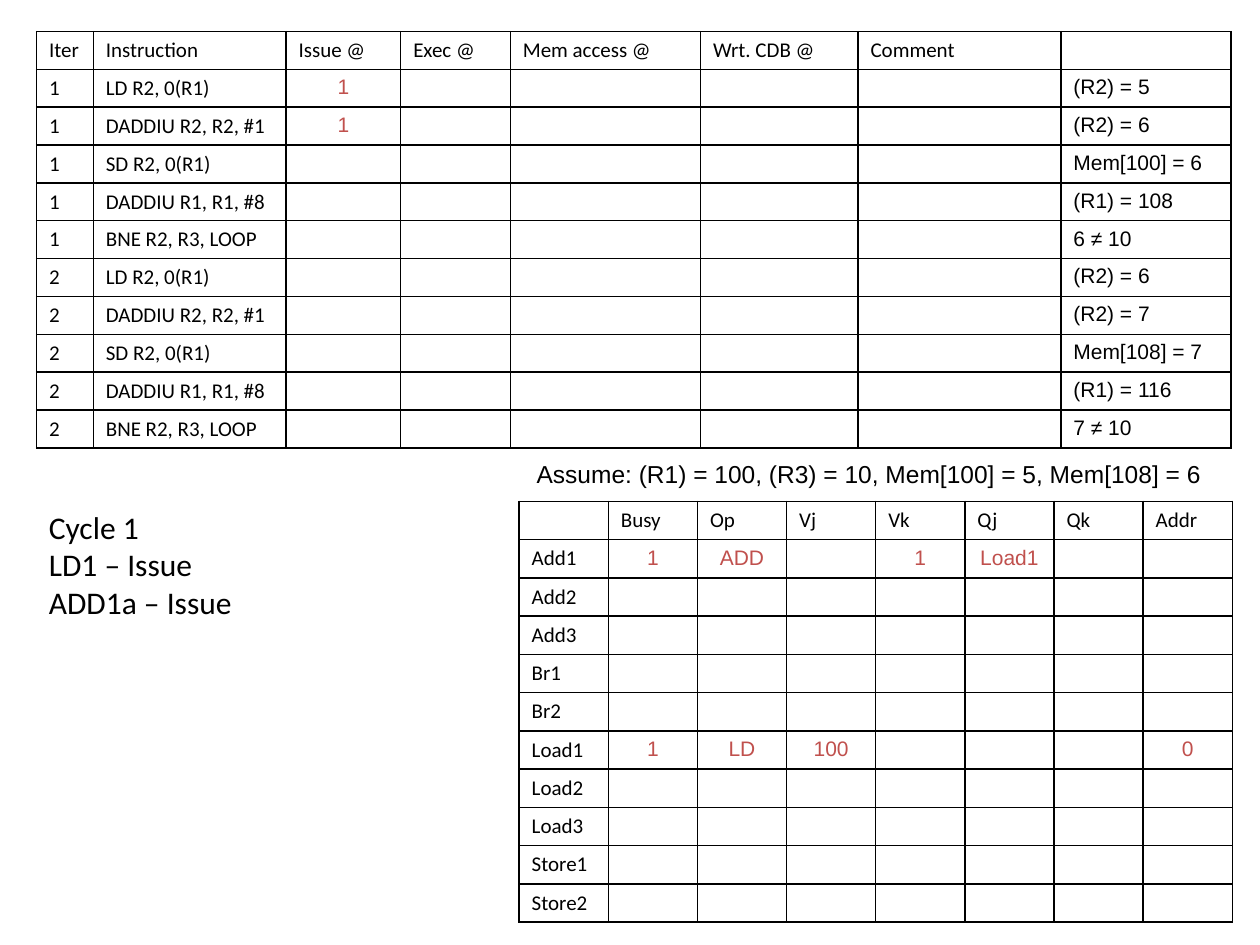
from dataclasses import dataclass

from lxml.etree import SubElement
from pptx import Presentation
from pptx.dml.color import RGBColor as RGB
from pptx.enum.text import MSO_AUTO_SIZE as AutoSize, PP_ALIGN as Align
from pptx.oxml import parse_xml
from pptx.oxml.ns import nsdecls, qn
from pptx.util import Inches, Pt

# Content
ITERATIONS = (1, 2)
LOOP_BODY = ["LD R2, 0(R1)", "DADDIU R2, R2, #1", "SD R2, 0(R1)",
             "DADDIU R1, R1, #8", "BNE R2, R3, LOOP"]
TIMING_HEADER = ["Iter", "Instruction", "Issue @", "Exec @", "Mem access @",
                 "Wrt. CDB @", "Comment", ""]
RESULTS = ["(R2) = 5", "(R2) = 6", "Mem[100] = 6", "(R1) = 108", "6 ≠ 10",
           "(R2) = 6", "(R2) = 7", "Mem[108] = 7", "(R1) = 116", "7 ≠ 10"]
ISSUED = {1: "1", 2: "1"}  # table row: issue cycle

STATION_HEADER = ["", "Busy", "Op", "Vj", "Vk", "Qj", "Qk", "Addr"]
STATIONS = ["Add1", "Add2", "Add3", "Br1", "Br2", "Load1", "Load2", "Load3",
            "Store1", "Store2"]
STATION_STATE = {
    "Add1": ["1", "ADD", "", "1", "Load1", "", ""],
    "Load1": ["1", "LD", "100", "", "", "", "0"],
}

CYCLE_NOTES = ["Cycle 1", "LD1 – Issue", "ADD1a – Issue"]
ASSUMPTION = ["Assume: (R1) = 100, (R3) = 10, Mem[100] = 5, Mem[108] = 6"]

# Layout in inches
TIMING_WIDTHS = [0.45, 1.53, 0.91, 0.87, 1.51, 1.25, 1.61, 1.35]
STATION_WIDTHS = [5.66 / len(STATION_HEADER)] * len(STATION_HEADER)
ROW_HEIGHT = 0.3


@dataclass(frozen=True)
class Theme:
    ink: RGB = RGB(0x00, 0x00, 0x00)
    accent: RGB = RGB(0xC0, 0x50, 0x4D)
    label_font: str = "Calibri"
    value_font: str = "Arial"
    table_size: int = 12
    assumption_size: int = 14
    cycle_size: int = 18
    border: int = 1


THEME = Theme()
LABEL = (THEME.label_font, THEME.ink, Align.LEFT)
RESULT = (THEME.value_font, THEME.ink, Align.LEFT)
ACTIVE = (THEME.value_font, THEME.accent, Align.CENTER)


def format_runs(para, font, size, color):
    for span in para.runs:
        span.font.name = font
        span.font.size = Pt(size)
        span.font.color.rgb = color


def add_borders(cell):
    properties = cell._tc.get_or_add_tcPr()
    for side in ("lnL", "lnR", "lnT", "lnB"):
        properties.append(parse_xml(
            f'<a:{side} {nsdecls("a")} w="{Pt(THEME.border)}"><a:solidFill>'
            f'<a:srgbClr val="{THEME.ink}"/></a:solidFill></a:{side}>'))


def add_grid(page, left, top, widths, rows, style_of):
    """Add a ruled table; style_of(row, column) gives font, color, alignment."""
    frame = page.shapes.add_table(
        len(rows), len(widths), Inches(left), Inches(top),
        Inches(sum(widths)), Inches(ROW_HEIGHT * len(rows)))
    table = frame.table
    table.first_row = table.horz_banding = False
    for column, width in zip(table.columns, widths):
        column.width = Inches(width)
    for r, values in enumerate(rows):
        table.rows[r].height = Inches(ROW_HEIGHT)
        for c, value in enumerate(values):
            cell = table.cell(r, c)
            add_borders(cell)
            cell.fill.background()
            para = cell.text_frame.paragraphs[0]
            if value:
                font, color, alignment = style_of(r, c)
                para.text = value
                para.alignment = alignment
                format_runs(para, font, THEME.table_size, color)
            else:  # keeps an empty cell from stretching its row
                SubElement(para._p, qn("a:endParaRPr"),
                           sz=str(THEME.table_size * 100))


def add_text(page, left, top, width, height, lines, font, size):
    box = page.shapes.add_textbox(
        Inches(left), Inches(top), Inches(width), Inches(height))
    box.text_frame.text = "\n".join(lines)
    box.text_frame.word_wrap = False
    box.text_frame.auto_size = AutoSize.SHAPE_TO_FIT_TEXT
    for para in box.text_frame.paragraphs:
        format_runs(para, font, size, THEME.ink)


def timing_style(row, column):
    if row and column == len(TIMING_HEADER) - 1:
        return RESULT
    return ACTIVE if row and column == 2 else LABEL


def station_style(row, column):
    return ACTIVE if row and column else LABEL


def main():
    deck = Presentation()
    deck.slide_width, deck.slide_height = Inches(10), Inches(7.5)
    page = deck.slides.add_slide(deck.slide_layouts[6])

    # Reservation stations
    idle = [""] * (len(STATION_HEADER) - 1)
    station_rows = [STATION_HEADER] + [
        [name] + STATION_STATE.get(name, idle) for name in STATIONS]
    add_grid(page, 4.12, 3.98, STATION_WIDTHS, station_rows, station_style)

    # Events of this cycle
    add_text(page, 0.29, 3.98, 1.67, 1.31, CYCLE_NOTES,
             THEME.label_font, THEME.cycle_size)

    # Instruction timing
    steps = [(str(i), code) for i in ITERATIONS for code in LOOP_BODY]
    timing_rows = [TIMING_HEADER] + [
        [iteration, code, ISSUED.get(row, ""), "", "", "", "", result]
        for row, ((iteration, code), result)
        in enumerate(zip(steps, RESULTS), start=1)]
    add_grid(page, 0.29, 0.25, TIMING_WIDTHS, timing_rows, timing_style)

    # Starting values
    add_text(page, 4.16, 3.59, 5.52, 0.34, ASSUMPTION,
             THEME.value_font, THEME.assumption_size)

    deck.save("out.pptx")


if __name__ == "__main__":
    main()
